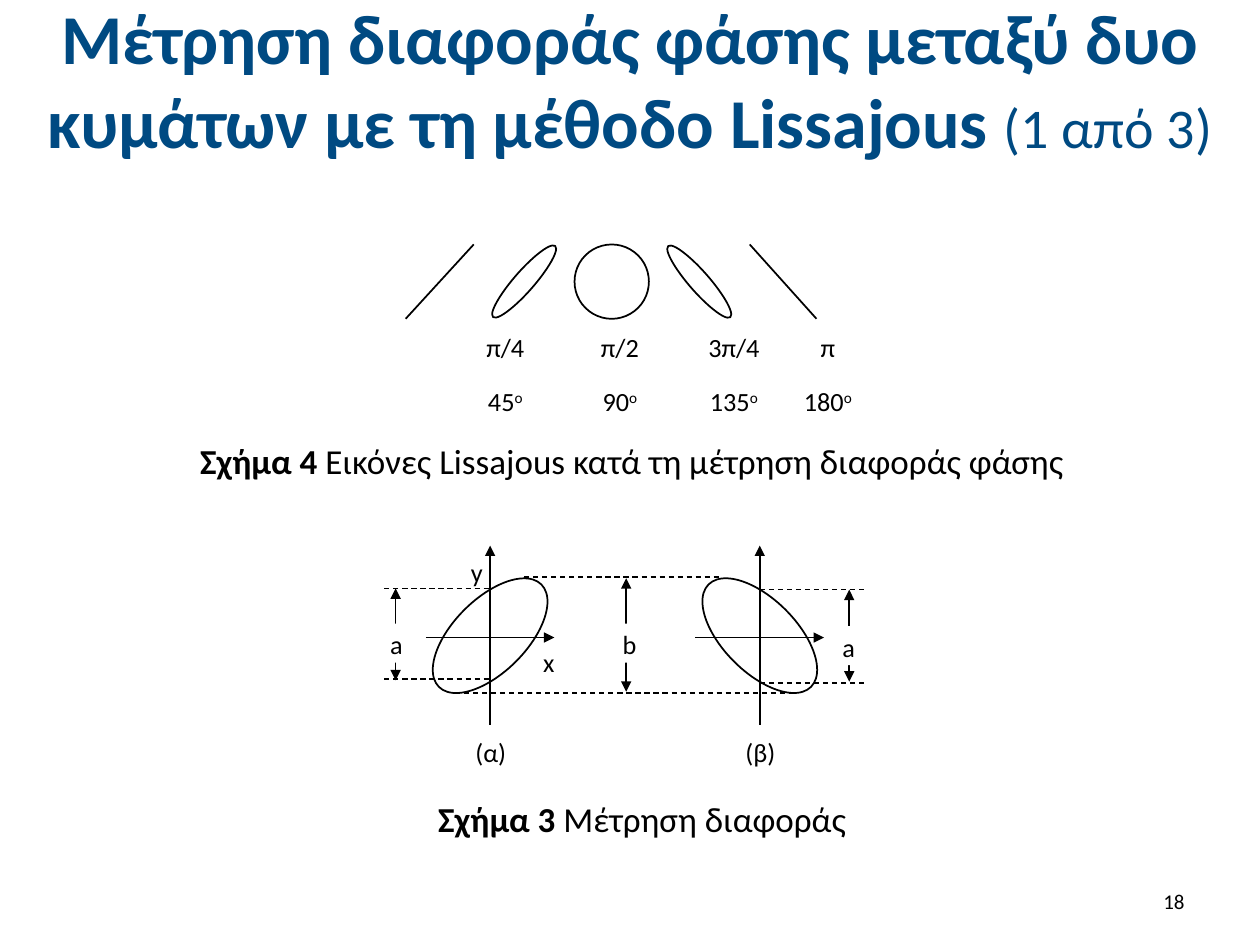
from lxml.etree import SubElement
from pptx import Presentation
from pptx.dml.color import RGBColor
from pptx.enum.dml import MSO_LINE
from pptx.enum.shapes import MSO_CONNECTOR, MSO_SHAPE
from pptx.enum.text import MSO_ANCHOR, MSO_AUTO_SIZE, PP_ALIGN
from pptx.oxml.ns import qn
from pptx.util import Inches, Pt

COLOURS = {"title": "004A82", "ink": "000000", "paper": "FFFFFF"}
MARGINS = ("margin_left", "margin_top", "margin_right", "margin_bottom")
NO_MARGINS = dict.fromkeys(MARGINS, 0)
LABEL_PARAGRAPH = {"alignment": PP_ALIGN.CENTER, "line_spacing": 1.15,
                   "space_after": Pt(10)}


def apply(target, values):
    for name, value in values.items():
        setattr(target, name, value)


def colour(name):
    return RGBColor.from_string(COLOURS[name])


class SlideBuilder:
    font = "Calibri"

    def __init__(self, slide):
        self.slide = slide
        self.canvas = slide.shapes

    def start_group(self):
        self.canvas = self.slide.shapes.add_group_shape().shapes

    def end_group(self):
        self.canvas = self.slide.shapes

    def set_text(self, frame, paragraphs, ink="ink", frame_format=None,
                 paragraph_format=None):
        """Each paragraph is a list of (text, font format) runs."""
        apply(frame, {"word_wrap": True, "auto_size": MSO_AUTO_SIZE.NONE,
                      **(frame_format or {})})
        for index, runs in enumerate(paragraphs):
            paragraph = frame.paragraphs[0] if index == 0 else frame.add_paragraph()
            apply(paragraph, paragraph_format or {})
            for text, font_format in runs:
                run = paragraph.add_run()
                run.text = text
                apply(run.font, {"name": self.font, **font_format})
                run.font.color.rgb = colour(ink)

    def title(self, box, runs):
        title = self.slide.shapes.title
        apply(title, dict(zip(("left", "top", "width", "height"), map(Inches, box))))
        self.set_text(title.text_frame, [runs], "title",
                      {"vertical_anchor": MSO_ANCHOR.MIDDLE},
                      {"alignment": PP_ALIGN.CENTER})

    def text(self, box, paragraphs, frame_format=None, paragraph_format=None):
        textbox = self.canvas.add_textbox(*map(Inches, box))
        self.set_text(textbox.text_frame, paragraphs, "ink", frame_format,
                      paragraph_format)
        return textbox

    def caption(self, box, number, wording, wrap=True):
        self.text(box, [[(number, {"size": Pt(20), "bold": True}),
                         (wording, {"size": Pt(20), "bold": False})]],
                  {"word_wrap": wrap, "auto_size": MSO_AUTO_SIZE.SHAPE_TO_FIT_TEXT})

    def label(self, left, top, wording):
        self.text((left, top, 0.31, 0.31), [[(wording, {"size": Pt(15)})]],
                  NO_MARGINS, LABEL_PARAGRAPH)

    def boxed_label(self, left, top, wording):
        plate = self.canvas.add_shape(
            MSO_SHAPE.RECTANGLE, *map(Inches, (left, top, 0.31, 0.31)))
        plate.shadow.inherit = False
        plate.fill.solid()
        plate.fill.fore_color.rgb = colour("paper")
        plate.line.fill.background()
        self.set_text(plate.text_frame, [[(wording, {"size": Pt(15)})]], "ink",
                      {**NO_MARGINS, "vertical_anchor": MSO_ANCHOR.TOP},
                      LABEL_PARAGRAPH)

    def phase_label(self, left, width, radians, degrees):
        label = self.text((left, 2.59, width, 0.39),
                          [[(radians, {"size": Pt(15)})],
                           [(degrees, {"size": Pt(15)}), ("ο", {"size": Pt(15)})]],
                          NO_MARGINS, LABEL_PARAGRAPH)
        degree_sign = label.text_frame.paragraphs[1].runs[1]
        degree_sign.font._element.set("baseline", "30000")

    def ellipse(self, box, rotation=0):
        curve = self.canvas.add_shape(MSO_SHAPE.OVAL, *map(Inches, box))
        curve.shadow.inherit = False
        curve.rotation = rotation
        curve.fill.background()
        curve.line.color.rgb = colour("ink")
        curve.line.width = Pt(1)

    def line(self, start, end, dashed=False, arrows=()):
        line = self.canvas.add_connector(
            MSO_CONNECTOR.STRAIGHT, *map(Inches, (*start, *end)))
        line.line.color.rgb = colour("ink")
        line.line.width = Pt(0.75 if dashed else 1)
        if dashed:
            line.line.dash_style = MSO_LINE.DASH
        for arrow in arrows:
            SubElement(line.line._get_or_add_ln(), qn(f"a:{arrow}"), type="triangle")
        SubElement(line._element.spPr, qn("a:effectLst"))

    def axis(self, start, end):
        self.line(start, end, arrows=("tailEnd",))

    def dimension(self, x, top, bottom):
        self.line((x, top), (x, bottom), arrows=("headEnd", "tailEnd"))

    def guide(self, left, right, y):
        self.line((left, y), (right, y), dashed=True)


def main():
    deck = Presentation()
    deck.slide_width, deck.slide_height = Inches(10), Inches(7.5)
    builder = SlideBuilder(deck.slides.add_slide(deck.slide_layouts[5]))

    # Title and page number
    builder.title((0, 0.13, 10, 0.99), [
        ("Μέτρηση διαφοράς φάσης μεταξύ δυο κυμάτων με τη μέθοδο Lissajous ",
         {"size": Pt(40), "bold": True}),
        ("(1 από 3)", {"size": Pt(32), "bold": False})])
    builder.text((7.17, 6.95, 2.33, 0.4), [[("18", {"size": Pt(12)})]],
                 {"vertical_anchor": MSO_ANCHOR.MIDDLE},
                 {"alignment": PP_ALIGN.RIGHT})

    # Lissajous curves from 0 to π
    builder.start_group()
    builder.line((3.22, 2.53), (3.76, 1.94))
    builder.ellipse((4.08, 1.86, 0.16, 0.75), 41.2)
    builder.ellipse((4.56, 1.94, 0.59, 0.59))
    builder.ellipse((5.47, 1.86, 0.16, 0.75), 318.8)
    builder.line((5.95, 1.94), (6.48, 2.53))
    for phase in ((3.84, 0.34, "π/4", "45"), (4.75, 0.34, "π/2", "90"),
                  (5.61, 0.43, "3π/4", "135"), (6.32, 0.5, "π", "180")):
        builder.phase_label(*phase)
    builder.end_group()
    builder.caption((1.49, 3.44, 7.3, 0.44), "Σχήμα 4",
                    " Εικόνες Lissajous κατά τη μέτρηση διαφοράς φάσης")

    # Tilted ellipses (α) and (β) with their axes
    builder.start_group()
    for centre, rotation, name in ((3.89, 45, "(α)"), (6.03, 315, "(β)")):
        builder.ellipse((centre - 0.29, 4.47, 0.58, 1.15), rotation)
        builder.axis((centre, 5.75), (centre, 4.33))
        builder.axis((centre - 0.51, 5.06), (centre + 0.51, 5.06))
        builder.label(centre - 0.15, 5.81, name)
    builder.label(4.2, 5.09, "x")
    builder.label(3.63, 4.38, "y")

    # Dashed guides: left a, right a, then b
    for guide in ((3.05, 3.89, 4.67), (3.05, 3.89, 5.39),
                  (6.03, 6.88, 4.68), (6.03, 6.88, 5.42),
                  (4.16, 5.72, 4.58), (3.61, 6.28, 5.5)):
        builder.guide(*guide)

    # Dimension arrows with their letters
    for x, top, bottom, letter_left, letter_top, letter in (
            (3.14, 4.67, 5.4, 2.99, 4.95, "a"),
            (4.97, 4.59, 5.49, 4.84, 4.95, "b"),
            (6.74, 4.68, 5.41, 6.58, 4.97, "a")):
        builder.dimension(x, top, bottom)
        builder.boxed_label(letter_left, letter_top, letter)
    builder.end_group()
    builder.caption((3.38, 6.28, 3.44, 0.44), "Σχήμα 3", " Μέτρηση διαφοράς",
                    wrap=False)

    deck.save("out.pptx")


if __name__ == "__main__":
    main()
